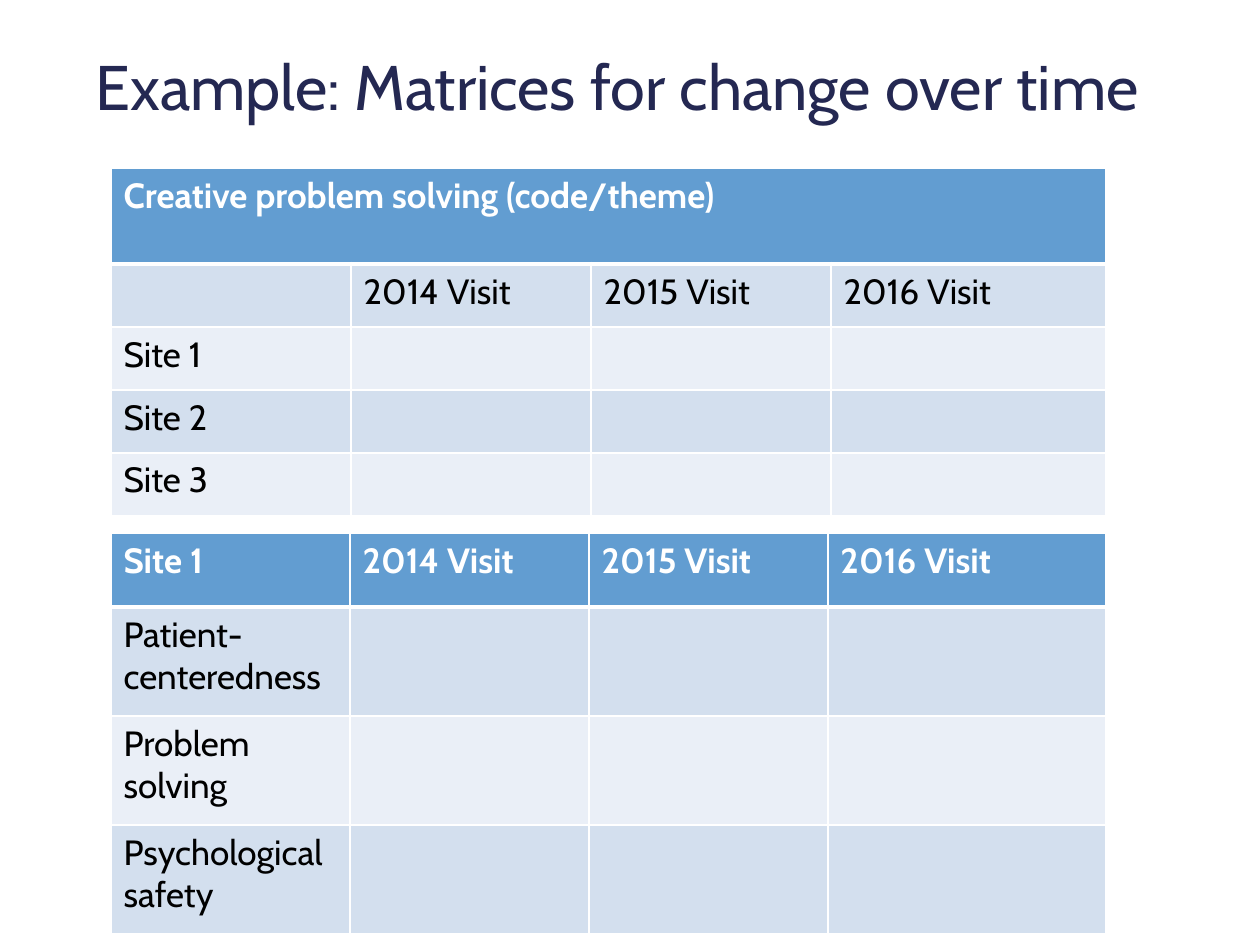
from dataclasses import dataclass

from lxml import etree
from pptx import Presentation
from pptx.dml.color import RGBColor
from pptx.enum.text import MSO_ANCHOR, PP_ALIGN
from pptx.oxml.ns import qn
from pptx.util import Emu, Pt

EMU_PER_PX = 914400 // 126
LEFT = PP_ALIGN.LEFT
MIDDLE = MSO_ANCHOR.MIDDLE
FONT = "Cabin"
WHITE, BLACK, NAVY = "FFFFFF", "000000", "242852"
HEADER_FILL = "629DD1"
BAND_FILLS = ("EAEFF7", "D3DFEE")
THIN, THICK = Pt(1), Pt(3)


@dataclass
class Matrix:
    left: int
    top: int
    columns: list[int]
    header_height: int
    row_height: int
    rows: list[list[str]]
    merged_header: bool = False


MATRICES = [
    Matrix(111, 533, [239, 239, 239, 278], 74, 109, [
        ["Site 1", "2014 Visit", "2015 Visit", "2016 Visit"],
        ["Patient-centeredness"],
        ["Problem solving"],
        ["Psychological safety"],
    ]),
    Matrix(111, 168, [240, 240, 240, 275], 96, 63, [
        ["Creative problem solving (code/theme)"],
        ["", "2014 Visit", "2015 Visit", "2016 Visit"],
        ["Site 1"],
        ["Site 2"],
        ["Site 3"],
    ], merged_header=True),
]


def px(length: int) -> Emu:
    return Emu(length * EMU_PER_PX)


def color(value: str) -> RGBColor:
    return RGBColor.from_string(value)


def format_text(text_frame, size: int, font_color: str, bold: bool = False) -> None:
    for paragraph in text_frame.paragraphs:
        for run in paragraph.runs:
            run.font.name = FONT
            run.font.size = Pt(size)
            run.font.bold = bold
            run.font.color.rgb = color(font_color)


def add_borders(cell, row_index: int) -> None:
    """Draw white cell edges, thick between the header and the body."""
    properties = cell._tc.get_or_add_tcPr()
    widths = {
        "a:lnL": THIN,
        "a:lnR": THIN,
        "a:lnT": THICK if row_index == 1 else THIN,
        "a:lnB": THICK if row_index == 0 else THIN,
    }
    for tag, width in widths.items():
        line = etree.SubElement(properties, qn(tag), w=str(width))
        fill = etree.SubElement(line, qn("a:solidFill"))
        etree.SubElement(fill, qn("a:srgbClr"), val=WHITE)


def add_matrix(slide, matrix: Matrix) -> None:
    row_count, column_count = len(matrix.rows), len(matrix.columns)
    heights = [matrix.header_height] + [matrix.row_height] * (row_count - 1)
    table = slide.shapes.add_table(
        row_count, column_count, px(matrix.left), px(matrix.top),
        px(sum(matrix.columns)), px(sum(heights))).table
    for column, width in zip(table.columns, matrix.columns):
        column.width = px(width)
    for row_index, (row, height) in enumerate(zip(table.rows, heights)):
        row.height = px(height)
        is_header = row_index == 0
        fill = HEADER_FILL if is_header else BAND_FILLS[row_index % 2]
        for cell in row.cells:
            add_borders(cell, row_index)
            cell.fill.solid()
            cell.fill.fore_color.rgb = color(fill)
        for cell, text in zip(row.cells, matrix.rows[row_index]):
            cell.text_frame.text = text
            format_text(cell.text_frame, 20, WHITE if is_header else BLACK, is_header)
    if matrix.merged_header:
        table.cell(0, 0).merge(table.cell(0, column_count - 1))


def add_title(slide, text: str) -> None:
    title = slide.shapes.title
    title.left, title.top, title.width, title.height = map(px, (83, 13, 1177, 145))
    text_frame = title.text_frame
    text_frame.text = text
    text_frame.vertical_anchor = MIDDLE
    text_frame.paragraphs[0].alignment = LEFT
    format_text(text_frame, 36, NAVY)


def main() -> None:
    presentation = Presentation()
    presentation.slide_width, presentation.slide_height = px(1260), px(945)
    slide = presentation.slides.add_slide(presentation.slide_layouts[5])
    add_title(slide, "Example: Matrices for change over time")
    for matrix in MATRICES:
        add_matrix(slide, matrix)
    presentation.save("out.pptx")


if __name__ == "__main__":
    main()
